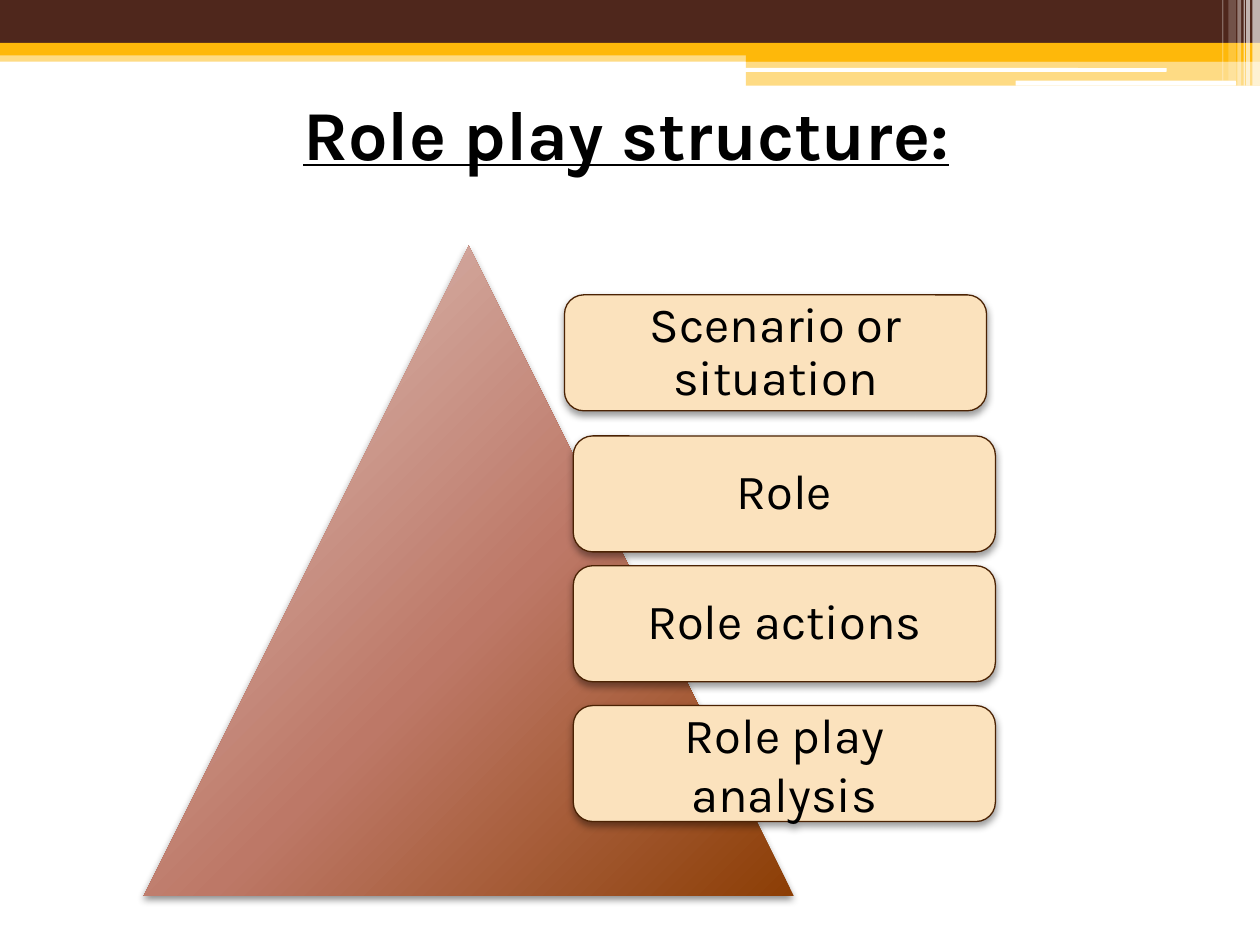
from lxml import etree
from pptx import Presentation
from pptx.dml.color import RGBColor
from pptx.enum import shapes, text
from pptx.oxml.ns import qn
from pptx.util import Inches, Pt

COLORS = {
    "brown": "4F271C",
    "gold": "FEB80A",
    "white": "FFFFFF",
    "black": "000000",
    "card": "FBE2BD",
    "card_line": "4B2203",
    "light": "E0C7C2",
    "middle": "BD7867",
    "dark": "8C3E05",
}
FONT = "Karla"
RECTANGLE = shapes.MSO_SHAPE.RECTANGLE
ROUNDED = shapes.MSO_SHAPE.ROUNDED_RECTANGLE

BANDS = [
    (RECTANGLE, (0, 0.4, 10, 0.09), "gold", 50),
    (RECTANGLE, (0, 0, 10, 0.34), "brown", 100),
    (RECTANGLE, (0, 0.34, 10, 0.1), "gold", 100),
    (RECTANGLE, (5.92, 0.39, 4.08, 0.1), "gold", 100),
    (RECTANGLE, (5.92, 0.48, 4.08, 0.2), "gold", 50),
    (ROUNDED, (5.91, 0.54, 3.35, 0.03), "white", 100),
    (ROUNDED, (8.06, 0.64, 1.75, 0.04), "white", 100),
]
STRIPES = [
    (9.94, 0.06, 0.68, 65),
    (9.89, 0.03, 0.68, 65),
    (9.87, 0.01, 0.68, 60),
    (9.82, 0.03, 0.68, 40),
    (9.75, 0.06, 0.64, 20),
    (9.7, 0.01, 0.64, 30),
]
CARDS = [
    ("Scenario or situation", 4.48, 2.34, 0.9),
    ("Role", 4.55, 3.46, 0.9),
    ("Role actions", 4.55, 4.49, 0.9),
    ("Role play analysis", 4.55, 5.6, 1.0),
]


def rgb(name):
    return RGBColor.from_string(COLORS[name])


def add_element(parent, tag, **attributes):
    values = {key: str(value) for key, value in attributes.items()}
    return etree.SubElement(parent, qn(tag), values)


def add_color(parent, name, opacity=100):
    color = add_element(parent, "a:srgbClr", val=COLORS[name])
    if opacity < 100:
        add_element(color, "a:alpha", val=opacity * 1000)


def add_plain_shape(slide, kind, box):
    shape = slide.shapes.add_shape(kind, *map(Inches, box))
    shape.shadow.inherit = False
    shape.line.fill.background()
    return shape


def add_band(slide, kind, box, color, opacity):
    shape = add_plain_shape(slide, kind, box)
    shape.fill.solid()
    shape.fill.fore_color.rgb = rgb(color)
    if opacity < 100:
        fill_color = shape.fill._xPr.find(qn("a:solidFill"))[0]
        add_element(fill_color, "a:alpha", val=opacity * 1000)


def add_shadow(shape, opacity, blur):
    effects = shape._element.spPr.find(qn("a:effectLst"))
    shadow = add_element(effects, "a:outerShdw", blurRad=Pt(blur), dist=Pt(2),
                         dir=5400000, algn="ctr", rotWithShape=0)
    add_color(shadow, "black", opacity)


def write_text(shape, content, size, inset, spacing=1.0, **format_values):
    frame = shape.text_frame
    frame.word_wrap = True
    frame.vertical_anchor = text.MSO_ANCHOR.MIDDLE
    for side in ("left", "right", "top", "bottom"):
        setattr(frame, f"margin_{side}", Inches(inset))
    paragraph = frame.paragraphs[0]
    paragraph.alignment = text.PP_ALIGN.CENTER
    paragraph.line_spacing = spacing
    run = paragraph.add_run()
    run.text = content
    values = {"name": FONT, "size": Pt(size), **format_values}
    for name, value in values.items():
        setattr(run.font, name, value)
    run.font.color.rgb = rgb("black")


def add_title(slide, content):
    box = slide.shapes.add_textbox(*map(Inches, (0.47, 0.47, 9, 1.17)))
    write_text(box, content, 40, 0.05, bold=True, underline=True)


def add_pyramid(slide):
    shape = add_plain_shape(slide, shapes.MSO_SHAPE.ISOSCELES_TRIANGLE,
                            (1.14, 1.95, 5.16, 5.16))
    properties = shape._element.spPr
    gradient = add_element(properties, "a:gradFill", rotWithShape=1)
    properties.find(qn("a:prstGeom")).addnext(gradient)
    stops = add_element(gradient, "a:gsLst")
    for position, color in ((0, "light"), (55, "middle"), (100, "dark")):
        add_color(add_element(stops, "a:gs", pos=position * 1000), color)
    circle = add_element(gradient, "a:path", path="circle")
    add_element(circle, "a:fillToRect", l=-40000, t=-90000, r=140000, b=190000)
    add_shadow(shape, 45, 4)


def add_card(slide, content, left, top, spacing):
    shape = add_plain_shape(slide, ROUNDED, (left, top, 3.35, 0.92))
    shape.fill.solid()
    shape.fill.fore_color.rgb = rgb("card")
    shape.line.color.rgb = rgb("card_line")
    shape.line.width = Pt(0.75)
    add_shadow(shape, 40, 4.1)
    write_text(shape, content, 28, 0.07, spacing)


def main():
    presentation = Presentation()
    presentation.slide_width = Inches(10)
    presentation.slide_height = Inches(7.5)
    slide = presentation.slides.add_slide(presentation.slide_layouts[6])
    for band in BANDS:
        add_band(slide, *band)
    for left, width, height, opacity in STRIPES:
        add_band(slide, RECTANGLE, (left, 0, width, height), "white", opacity)
    add_title(slide, "Role play structure:")
    add_pyramid(slide)
    for card in CARDS:
        add_card(slide, *card)
    presentation.save("out.pptx")


if __name__ == "__main__":
    main()
